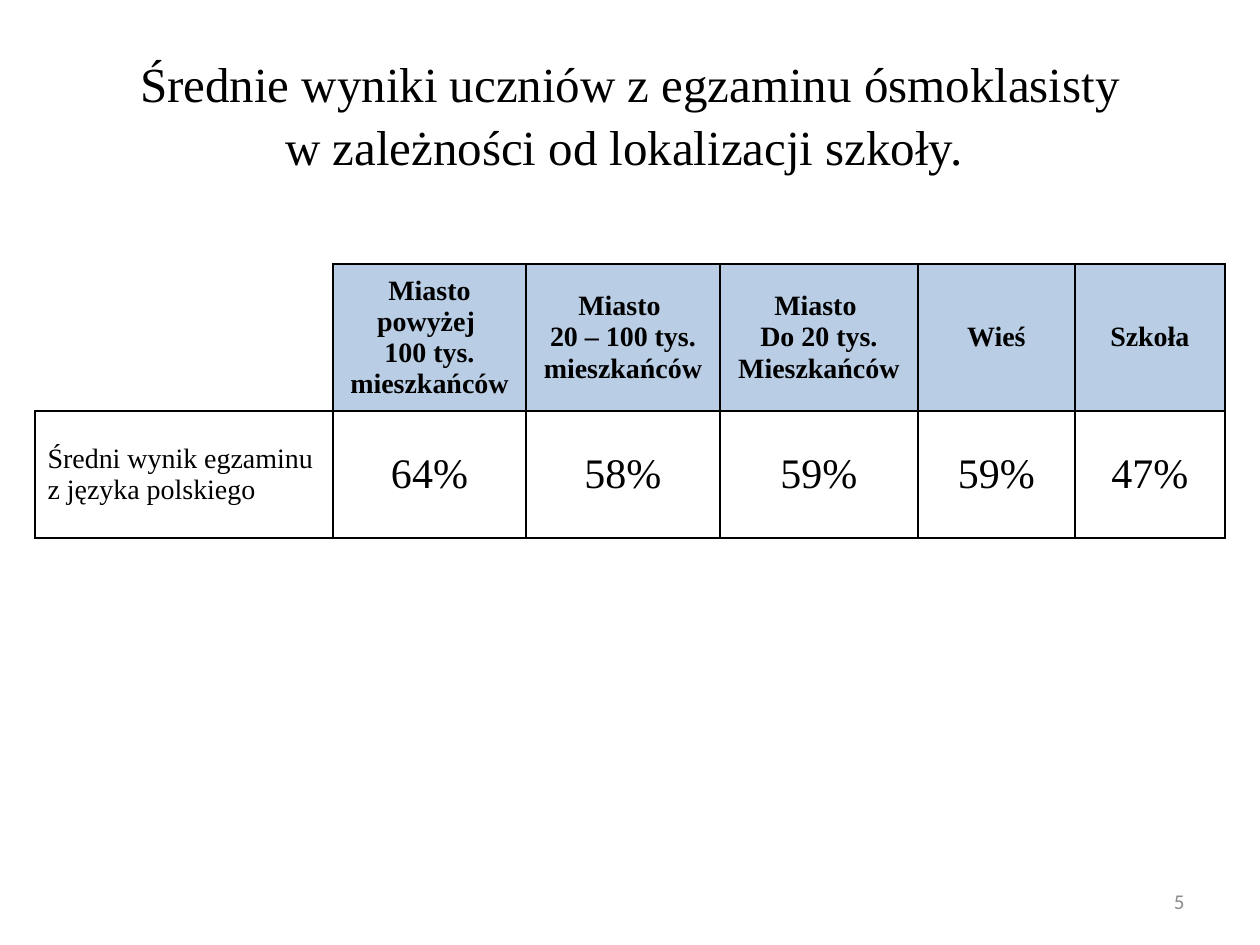
import pptx
import pptx.util
import pptx.dml.color
import pptx.enum.text
import pptx.oxml.ns
import lxml.etree
from dataclasses import dataclass

EMU_PER_PX = 914400 // 126
ALIGN = pptx.enum.text.PP_ALIGN
ANCHOR = pptx.enum.text.MSO_ANCHOR


@dataclass(frozen=True)
class Theme:
    serif: str = "Times New Roman"
    sans: str = "Calibri"
    ink: str = "000000"
    muted: str = "8C8C8C"
    header_fill: str = "B9CDE5"
    title_size: int = 28
    label_size: int = 16
    result_size: int = 24
    number_size: int = 12
    border_pt: int = 1


THEME = Theme()

LOCATIONS = [
    "Miasto powyżej \n100 tys. mieszkańców",
    "Miasto \n20 – 100 tys. mieszkańców",
    "Miasto \nDo 20 tys. Mieszkańców",
    "Wieś",
    "Szkoła",
]
RESULTS = ["64%", "58%", "59%", "59%", "47%"]
COLUMN_WIDTHS = [298, 193, 194, 198, 157, 150]
ROW_HEIGHTS = [147, 127]


def px(length):
    return pptx.util.Emu(length * EMU_PER_PX)


def place(shape, left, top, width, height):
    shape.left, shape.top = px(left), px(top)
    shape.width, shape.height = px(width), px(height)


def write(frame, text, size, align=ALIGN.CENTER, font=THEME.serif,
          color=THEME.ink, bold=False):
    frame.text = text
    frame.word_wrap = True
    for paragraph in frame.paragraphs:
        paragraph.alignment = align
        for run in paragraph.runs:
            run.font.name = font
            run.font.size = pptx.util.Pt(size)
            run.font.bold = bold
            run.font.color.rgb = pptx.dml.color.RGBColor.from_string(color)


def set_borders(cell, visible="LRTB"):
    properties = cell._tc.get_or_add_tcPr()
    qn = pptx.oxml.ns.qn
    for position, side in enumerate("LRTB"):
        line = lxml.etree.Element(qn(f"a:ln{side}"))
        properties.insert(position, line)
        if side in visible:
            line.set("w", str(pptx.util.Pt(THEME.border_pt)))
            fill = lxml.etree.SubElement(line, qn("a:solidFill"))
            lxml.etree.SubElement(fill, qn("a:srgbClr"), val=THEME.ink)
        else:
            line.set("w", "0")
            lxml.etree.SubElement(line, qn("a:noFill"))


def add_title(slide):
    title = slide.shapes.title
    place(title, 0, 0, 1260, 194)
    frame = title.text_frame
    write(frame, "Średnie wyniki uczniów z egzaminu ósmoklasisty\n"
          "w zależności od lokalizacji szkoły. ", THEME.title_size)
    frame.auto_size = pptx.enum.text.MSO_AUTO_SIZE.NONE
    frame.vertical_anchor = ANCHOR.TOP
    frame.margin_left = frame.margin_right = px(74)
    frame.margin_top, frame.margin_bottom = px(49), px(25)
    for paragraph in frame.paragraphs:
        paragraph.line_spacing = 1.07
        paragraph.space_before = pptx.util.Pt(0)


def add_results_table(slide):
    table = slide.shapes.add_table(
        len(ROW_HEIGHTS), len(COLUMN_WIDTHS), px(35), px(264),
        px(sum(COLUMN_WIDTHS)), px(sum(ROW_HEIGHTS))).table
    table.first_row = table.horz_banding = False
    for column, width in zip(table.columns, COLUMN_WIDTHS):
        column.width = px(width)
    for row, height in zip(table.rows, ROW_HEIGHTS):
        row.height = px(height)
    for cell in table.iter_cells():
        cell.fill.background()
        cell.vertical_anchor = ANCHOR.MIDDLE

    for index, (location, result) in enumerate(zip(LOCATIONS, RESULTS), 1):
        header = table.cell(0, index)
        header.fill.solid()
        header.fill.fore_color.rgb = pptx.dml.color.RGBColor.from_string(
            THEME.header_fill)
        write(header.text_frame, location, THEME.label_size, bold=True)
        write(table.cell(1, index).text_frame, result, THEME.result_size)
    write(table.cell(1, 0).text_frame,
          "Średni wynik egzaminu\nz języka polskiego",
          THEME.label_size, align=ALIGN.LEFT)

    corner = table.cell(0, 0)
    for cell in table.iter_cells():
        set_borders(cell, "RB" if cell == corner else "LRTB")


def add_slide_number(slide):
    number = slide.shapes.add_textbox(px(903), px(876), px(294), px(50))
    write(number.text_frame, "5", THEME.number_size, align=ALIGN.RIGHT,
          font=THEME.sans, color=THEME.muted)
    number.text_frame.vertical_anchor = ANCHOR.MIDDLE


def main():
    deck = pptx.Presentation()
    deck.slide_width, deck.slide_height = px(1260), px(945)
    slide = deck.slides.add_slide(deck.slide_layouts[5])
    add_title(slide)
    add_results_table(slide)
    add_slide_number(slide)
    deck.save("out.pptx")


if __name__ == "__main__":
    main()
